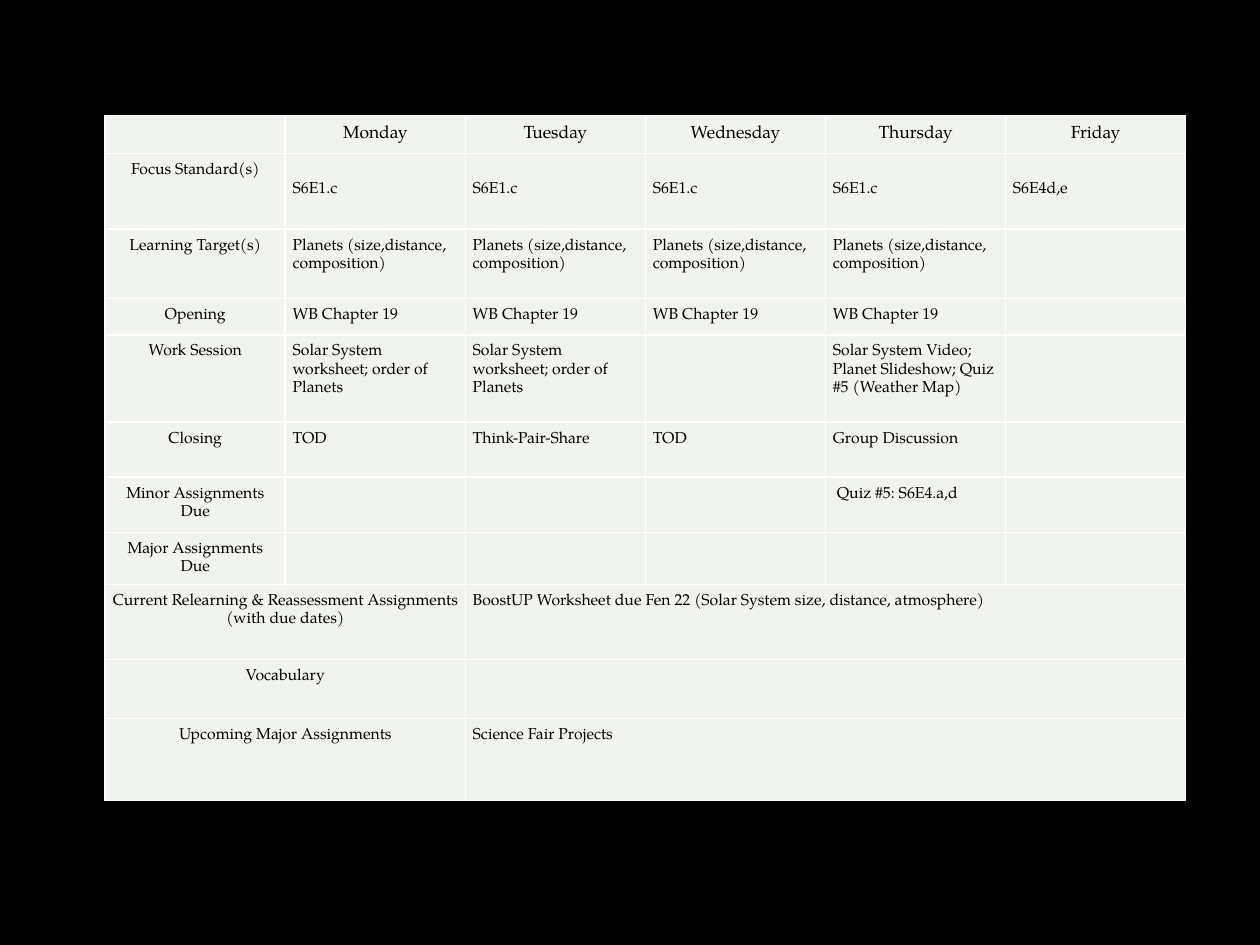
from lxml import etree
from pptx import Presentation
from pptx.dml.color import RGBColor
from pptx.enum.text import PP_ALIGN
from pptx.oxml.ns import qn
from pptx.util import Cm, Pt

CENTER, LEFT = PP_ALIGN.CENTER, PP_ALIGN.LEFT
COLORS = {"background": "000000", "cell": "F0F3EE", "border": "FFFFFF", "text": "000000"}
FONT = "TeX Gyre Pagella"

STANDARD = "S6E1.c"
TARGET = "Planets (size,distance, composition)"
CHAPTER = "WB Chapter 19"
WORKSHEET = "Solar System worksheet; order of Planets"
VIDEO = "Solar System Video; Planet Slideshow; Quiz #5 (Weather Map)"

WEEK_ROWS = [
    (0.76, ["", "Monday", "Tuesday", "Wednesday", "Thursday", "Friday"]),
    (1.53, ["Focus Standard(s)"] + [STANDARD] * 4 + ["S6E4d,e"]),
    (1.40, ["Learning Target(s)"] + [TARGET] * 4 + [""]),
    (0.73, ["Opening"] + [CHAPTER] * 4 + [""]),
    (1.76, ["Work Session", WORKSHEET, WORKSHEET, "", VIDEO, ""]),
    (1.11, ["Closing", "TOD", "Think-Pair-Share", "TOD", "Group Discussion", ""]),
    (1.12, ["Minor Assignments Due", "", "", "", "Quiz #5: S6E4.a,d", ""]),
    (1.04, ["Major Assignments Due", "", "", "", "", ""]),
]
SUMMARY_ROWS = [
    (1.52, "Current Relearning & Reassessment Assignments (with due dates)",
     "BoostUP Worksheet due Fen 22 (Solar System size, distance, atmosphere)"),
    (1.19, "Vocabulary", ""),
    (1.65, "Upcoming Major Assignments", "Science Fair Projects"),
]
COLUMN_COUNT = 6
COLUMN_WIDTH = 3.63
SUMMARY_SPLIT = 2
TABLE_LEFT, TABLE_TOP = 2.12, 2.33
MARGIN = 0.15
STANDARD_ROW, MINOR_ROW = 1, 6
STANDARD_MARGIN_TOP = 0.53
QUIZ_MARGIN_LEFT = 0.23


def add_borders(cell):
    properties = cell._tc.get_or_add_tcPr()
    for side in ("a:lnL", "a:lnR", "a:lnT", "a:lnB"):
        line = etree.SubElement(properties, qn(side), w=str(Pt(1)))
        fill = etree.SubElement(line, qn("a:solidFill"))
        etree.SubElement(fill, qn("a:srgbClr"), val=COLORS["border"])


def style_cell(cell):
    add_borders(cell)
    cell.fill.solid()
    cell.fill.fore_color.rgb = RGBColor.from_string(COLORS["cell"])
    cell.margin_left = cell.margin_right = Cm(MARGIN)
    cell.margin_top = cell.margin_bottom = Cm(MARGIN)
    end_properties = cell.text_frame.paragraphs[0]._p.get_or_add_endParaRPr()
    end_properties.set("sz", "900")


def write_cell(cell, text, size, alignment):
    if not text:
        return
    paragraph = cell.text_frame.paragraphs[0]
    paragraph.text = text
    paragraph.alignment = alignment
    paragraph.line_spacing = 1.15
    for run in paragraph.runs:
        run.font.name = FONT
        run.font.size = Pt(size)
        run.font.bold = False
        run.font.color.rgb = RGBColor.from_string(COLORS["text"])


def main():
    presentation = Presentation()
    presentation.slide_width, presentation.slide_height = Cm(25.4), Cm(19.05)
    slide = presentation.slides.add_slide(presentation.slide_layouts[6])
    slide.background.fill.solid()
    slide.background.fill.fore_color.rgb = RGBColor.from_string(COLORS["background"])

    heights = [row[0] for row in WEEK_ROWS + SUMMARY_ROWS]
    table = slide.shapes.add_table(
        len(heights), COLUMN_COUNT, Cm(TABLE_LEFT), Cm(TABLE_TOP),
        Cm(COLUMN_WIDTH * COLUMN_COUNT), Cm(sum(heights))).table
    table.first_row = table.horz_banding = False
    for column in table.columns:
        column.width = Cm(COLUMN_WIDTH)
    for row, height in zip(table.rows, heights):
        row.height = Cm(height)
    for cell in table.iter_cells():
        style_cell(cell)

    for row_index, (_, texts) in enumerate(WEEK_ROWS):
        for column_index, text in enumerate(texts):
            is_header = row_index == 0
            alignment = CENTER if is_header or column_index == 0 else LEFT
            write_cell(table.cell(row_index, column_index), text, 10 if is_header else 9, alignment)
    for column_index in range(1, COLUMN_COUNT):
        table.cell(STANDARD_ROW, column_index).margin_top = Cm(STANDARD_MARGIN_TOP)
    table.cell(MINOR_ROW, 4).margin_left = Cm(QUIZ_MARGIN_LEFT)

    for row_index, (_, label, text) in enumerate(SUMMARY_ROWS, len(WEEK_ROWS)):
        label_cell = table.cell(row_index, 0)
        text_cell = table.cell(row_index, SUMMARY_SPLIT)
        label_cell.merge(table.cell(row_index, SUMMARY_SPLIT - 1))
        text_cell.merge(table.cell(row_index, COLUMN_COUNT - 1))
        write_cell(label_cell, label, 9, CENTER)
        write_cell(text_cell, text, 9, LEFT)

    presentation.save("out.pptx")


if __name__ == "__main__":
    main()
